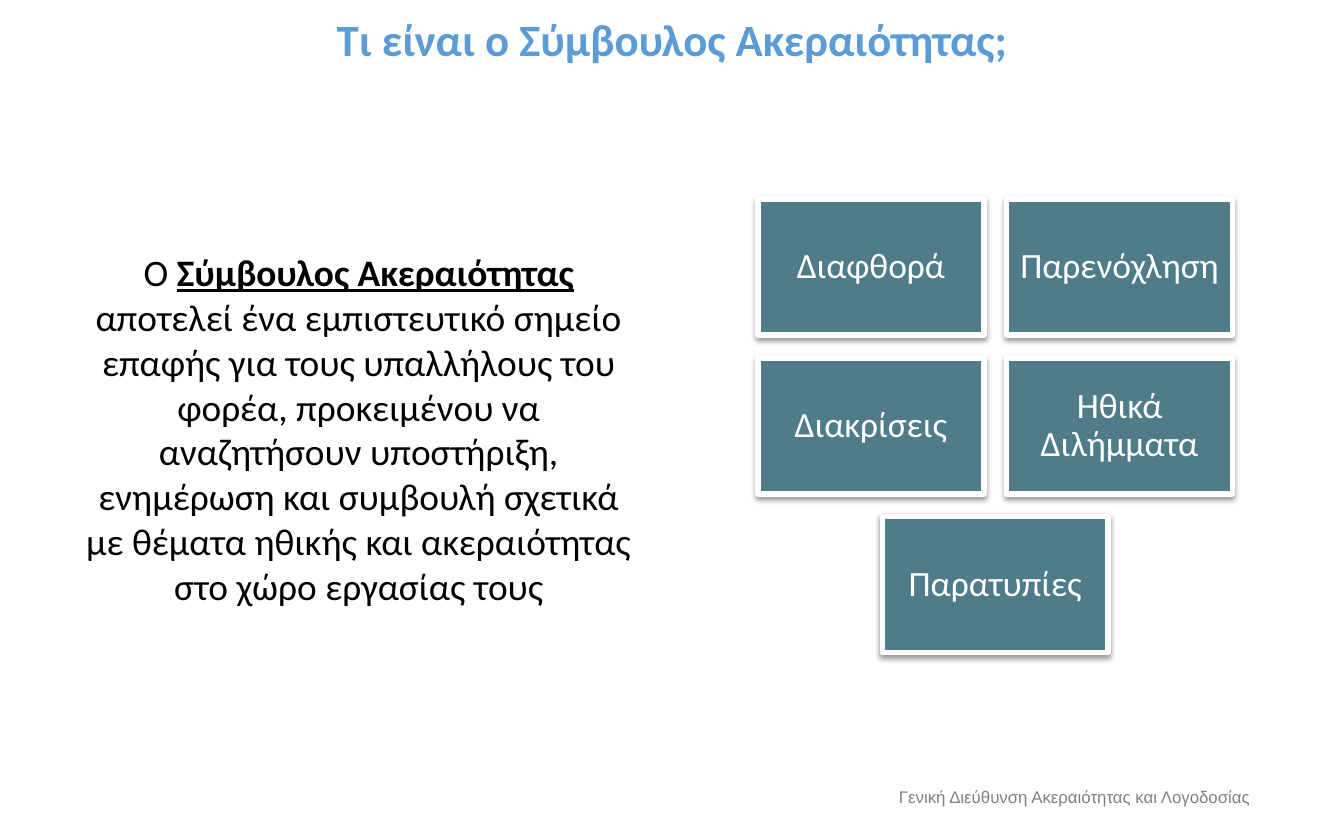
import pptx
import pptx.util
import pptx.dml.color
import pptx.enum.text
import pptx.enum.shapes
import pptx.oxml
import pptx.oxml.ns

RGBColor = pptx.dml.color.RGBColor
Inches = pptx.util.Inches
Pt = pptx.util.Pt
Align = pptx.enum.text.PP_ALIGN
Anchor = pptx.enum.text.MSO_ANCHOR

BLUE = RGBColor(0x5B, 0x9B, 0xD6)
TEAL = RGBColor(0x50, 0x7C, 0x89)
GRAY = RGBColor(0x80, 0x80, 0x80)
BLACK = RGBColor(0, 0, 0)
WHITE = RGBColor(255, 255, 255)

SHADE = (
    f'<a:outerShdw {pptx.oxml.ns.nsdecls("a")} blurRad="{Pt(3.1)}" dist="{Pt(1.6)}" '
    'dir="5400000" rotWithShape="0"><a:srgbClr val="000000">'
    '<a:alpha val="38000"/></a:srgbClr></a:outerShdw>'
)


class Page:
    wide, high = Inches(10), Inches(6.25)
    cols = rows = 100

    def __init__(self, deck):
        deck.slide_width, deck.slide_height = self.wide, self.high
        self.slide = deck.slides.add_slide(deck.slide_layouts[6])

    def place(self, x, y, w, h):
        col, row = self.wide / self.cols, self.high / self.rows
        return [round(n * unit) for n, unit in zip((x, y, w, h), (col, row, col, row))]

    def letter(self, shape, runs, size, color, font="Calibri", align=Align.CENTER):
        frame = shape.text_frame
        frame.word_wrap = True
        frame.vertical_anchor = Anchor.MIDDLE
        para = frame.paragraphs[0]
        para.alignment = align
        for text, strong, line in runs:
            run = para.add_run()
            run.text = text
            run.font.name, run.font.size = font, Pt(size)
            run.font.bold, run.font.underline = strong, line
            run.font.color.rgb = color
        return frame

    def text(self, area, runs, size, color, **style):
        box = self.slide.shapes.add_textbox(*self.place(*area))
        return self.letter(box, runs, size, color, **style)

    def tile(self, area, label):
        kind = pptx.enum.shapes.MSO_SHAPE.RECTANGLE
        shape = self.slide.shapes.add_shape(kind, *self.place(*area))
        shape.fill.solid()
        shape.fill.fore_color.rgb = TEAL
        shape.line.color.rgb = WHITE
        shape.line.width = Pt(3)
        shape.shadow.inherit = False
        effects = shape._element.spPr.find(pptx.oxml.ns.qn("a:effectLst"))
        effects.append(pptx.oxml.parse_xml(SHADE))
        frame = self.letter(shape, [(label, False, False)], 19, WHITE)
        frame.margin_left = frame.margin_right = Inches(0.08)
        frame.margin_top = frame.margin_bottom = Inches(0.08)
        frame.paragraphs[0].line_spacing = 0.9

    def tiles(self, lines, mid, top, w, h, across, down):
        for row, labels in enumerate(lines):
            left = mid - (w + across * (len(labels) - 1)) / 2
            for col, label in enumerate(labels):
                self.tile((left + col * across, top + row * down, w, h), label)


def main():
    deck = pptx.Presentation()
    page = Page(deck)
    page.text((5, 0.8, 90, 7.5), [("Τι είναι ο Σύμβουλος Ακεραιότητας;", True, False)], 24, BLUE)
    body = page.text((5, 14.7, 43.4, 76.8), [
        ("Ο ", False, False),
        ("Σύμβουλος Ακεραιότητας ", True, True),
        ("αποτελεί ένα εμπιστευτικό σημείο επαφής για τους υπαλλήλους του φορέα, "
         "προκειμένου να αναζητήσουν υποστήριξη, ενημέρωση και συμβουλή σχετικά με "
         "θέματα ηθικής και ακεραιότητας στο χώρο εργασίας τους", False, False),
    ], 20, BLACK)
    body.margin_bottom = Inches(0.31)
    page.text((65.9, 92.8, 31.5, 4),
              [("Γενική Διεύθυνση Ακεραιότητας και Λογοδοσίας", False, False)],
              9, GRAY, font="Arial", align=Align.LEFT)
    page.tiles([
        ("Διαφθορά", "Παρενόχληση"),
        ("Διακρίσεις", "Ηθικά Διλήμματα"),
        ("Παρατυπίες",),
    ], mid=74.05, top=23.7, w=16.8, h=16.2, across=18.5, down=18.9)
    deck.save("out.pptx")


if __name__ == "__main__":
    main()
